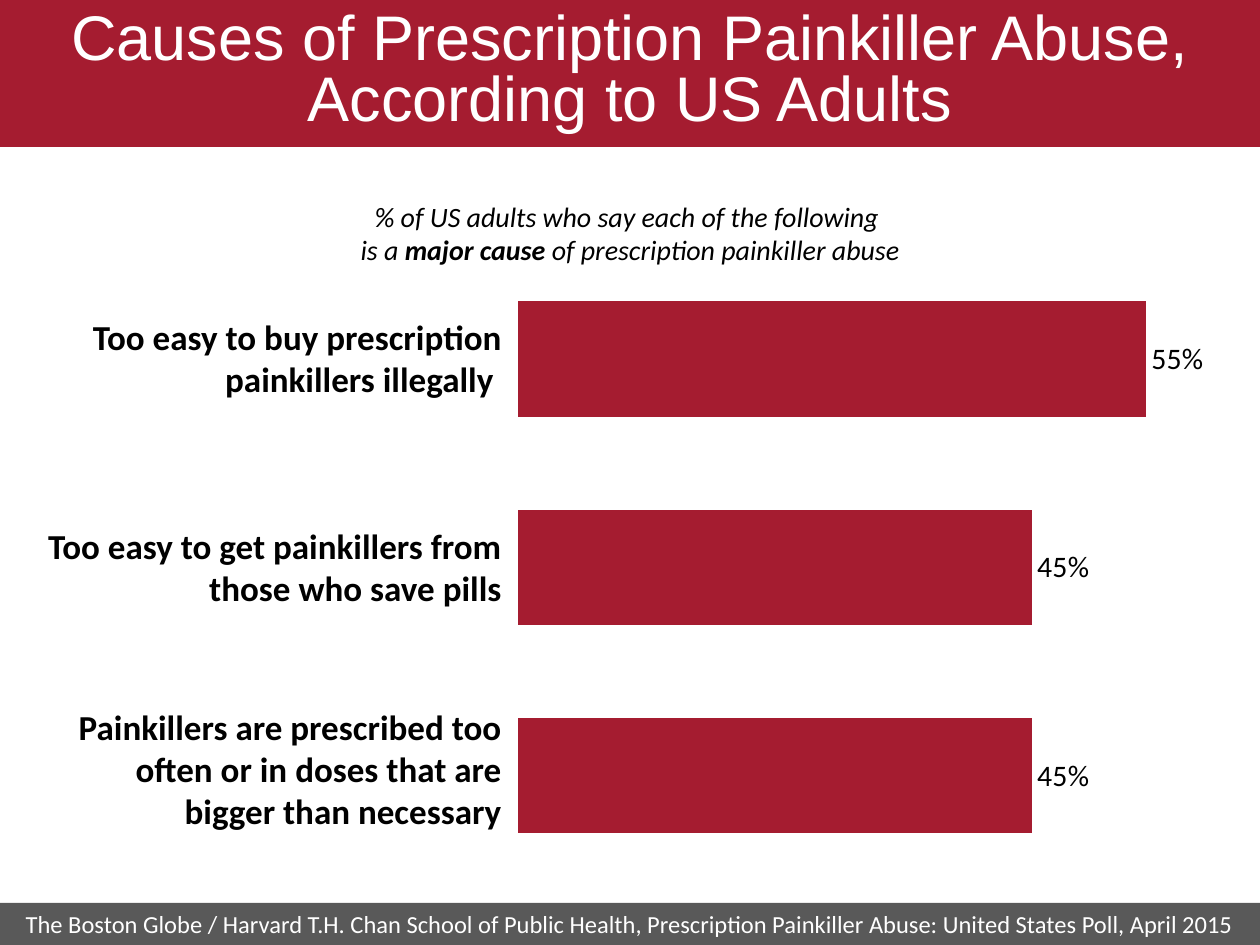
from dataclasses import dataclass

from pptx import Presentation
from pptx.chart.data import CategoryChartData
from pptx.dml.color import RGBColor
from pptx.enum.chart import XL_CHART_TYPE, XL_LABEL_POSITION
from pptx.enum.shapes import MSO_SHAPE
from pptx.enum.text import MSO_ANCHOR, MSO_AUTO_SIZE, PP_ALIGN
from pptx.oxml import parse_xml
from pptx.oxml.ns import nsdecls
from pptx.util import Emu, Pt

BAR_CLUSTERED = XL_CHART_TYPE.BAR_CLUSTERED
OUTSIDE_END = XL_LABEL_POSITION.OUTSIDE_END
RECTANGLE = MSO_SHAPE.RECTANGLE
TOP, MIDDLE = MSO_ANCHOR.TOP, MSO_ANCHOR.MIDDLE
CENTER, RIGHT = PP_ALIGN.CENTER, PP_ALIGN.RIGHT
FIT_SHAPE, NO_FIT = MSO_AUTO_SIZE.SHAPE_TO_FIT_TEXT, MSO_AUTO_SIZE.NONE

PX_PER_INCH = 126
SLIDE_WIDTH, SLIDE_HEIGHT = 1260, 945
COLORS = {"crimson": "A51C30", "gray": "595959", "black": "000000", "white": "FFFFFF"}
BODY_FONT = "Calibri"


@dataclass(frozen=True)
class Box:
    left: int
    top: int
    width: int
    height: int

    def emu(self) -> list[Emu]:
        return [px(n) for n in (self.left, self.top, self.width, self.height)]


@dataclass(frozen=True)
class Cause:
    text: str
    share: float
    box: Box


CAUSES = [
    Cause("Too easy to buy prescription painkillers illegally ", 0.55,
          Box(32, 309, 482, 97)),
    Cause("Too easy to get painkillers from those who save pills", 0.45,
          Box(32, 518, 482, 97)),
    Cause("Painkillers are prescribed too often or in doses that are "
          "bigger than necessary", 0.45, Box(32, 699, 482, 140)),
]


def px(length: int) -> Emu:
    return Emu(round(length * 914400 / PX_PER_INCH))


def color(name: str) -> RGBColor:
    return RGBColor.from_string(COLORS[name])


def add_band(slide, box: Box, fill: str):
    band = slide.shapes.add_shape(RECTANGLE, *box.emu())
    band.shadow.inherit = False
    band.fill.solid()
    band.fill.fore_color.rgb = color(fill)
    band.line.fill.background()
    return band


def write(shape, text: str, *, size: int, font=BODY_FONT, ink="black", align=CENTER,
          anchor=TOP, bold=False, italic=False, emphasis="", spacing=None, fit=FIT_SHAPE):
    frame = shape.text_frame
    frame.word_wrap = True
    frame.auto_size = fit
    frame.vertical_anchor = anchor
    paragraph = frame.paragraphs[0]
    paragraph.alignment = align
    paragraph.line_spacing = spacing
    for number, line in enumerate(text.split("\n")):
        if number:
            paragraph.add_line_break()
        parts = line.partition(emphasis) if emphasis else (line,)
        for part in filter(None, parts):
            run = paragraph.add_run()
            run.text = part
            run.font.name = font
            run.font.size = Pt(size)
            run.font.bold = bold or part == emphasis
            run.font.italic = italic
            run.font.color.rgb = color(ink)


def add_text(slide, box: Box, text: str, **text_format):
    write(slide.shapes.add_textbox(*box.emu()), text, **text_format)


def add_shares_chart(slide, box: Box, causes: list[Cause]):
    shares = CategoryChartData(number_format="0%")
    shares.categories = [str(n + 1) for n in range(len(causes))]
    shares.add_series("Series 1", [cause.share for cause in reversed(causes)])
    chart = slide.shapes.add_chart(BAR_CLUSTERED, *box.emu(), shares).chart
    chart.has_legend = False
    chart.has_title = False
    chart.font.name = BODY_FONT
    chart.font.size = Pt(18)
    chart.font.color.rgb = color("black")
    for axis in (chart.category_axis, chart.value_axis):
        axis.visible = False
        axis.has_major_gridlines = False
    chart.value_axis.minimum_scale = 0
    chart.value_axis.maximum_scale = 0.6

    plot = chart.plots[0]
    plot.gap_width = 80
    plot.vary_by_categories = False
    bars = plot.series[0].format
    bars.fill.solid()
    bars.fill.fore_color.rgb = color("crimson")
    plot.has_data_labels = True
    labels = plot.data_labels
    labels.show_value = True
    labels.position = OUTSIDE_END
    labels.number_format = "0%"
    labels.number_format_is_linked = False
    labels.font.name = BODY_FONT
    labels.font.size = Pt(17)
    labels.font.color.rgb = color("black")

    plot_area = chart._chartSpace.chart.plotArea
    for layout in plot_area.findall("{*}layout"):
        plot_area.remove(layout)
    plot_area.insert(0, parse_xml(
        f'<c:layout {nsdecls("c")}><c:manualLayout><c:layoutTarget val="inner"/>'
        '<c:xMode val="edge"/><c:yMode val="edge"/><c:x val="0.02"/><c:y val="0.02"/>'
        '<c:w val="0.96"/><c:h val="0.96"/></c:manualLayout></c:layout>'))


def main():
    deck = Presentation()
    deck.slide_width, deck.slide_height = px(SLIDE_WIDTH), px(SLIDE_HEIGHT)
    slide = deck.slides.add_slide(deck.slide_layouts[6])

    add_band(slide, Box(0, 0, SLIDE_WIDTH, 147), "crimson")
    add_text(slide, Box(0, 10, SLIDE_WIDTH, 126),
             "Causes of Prescription Painkiller Abuse, According to US Adults",
             size=36, font="Arial", ink="white", anchor=MIDDLE, spacing=Pt(35), fit=NO_FIT)
    add_shares_chart(slide, Box(504, 242, 714, 651), CAUSES)
    for cause in CAUSES:
        add_text(slide, cause.box, cause.text, size=20, bold=True, align=RIGHT)

    source = add_band(slide, Box(0, 903, SLIDE_WIDTH, 42), "gray")
    write(source, "The Boston Globe / Harvard T.H. Chan School of Public Health, "
          "Prescription Painkiller Abuse: United States Poll, April 2015",
          size=14, ink="white", anchor=MIDDLE, fit=NO_FIT)
    add_text(slide, Box(0, 193, SLIDE_WIDTH, 81),
             "% of US adults who say each of the following \n"
             "is a major cause of prescription painkiller abuse",
             size=16, italic=True, emphasis="major cause ")
    deck.save("out.pptx")


if __name__ == "__main__":
    main()
